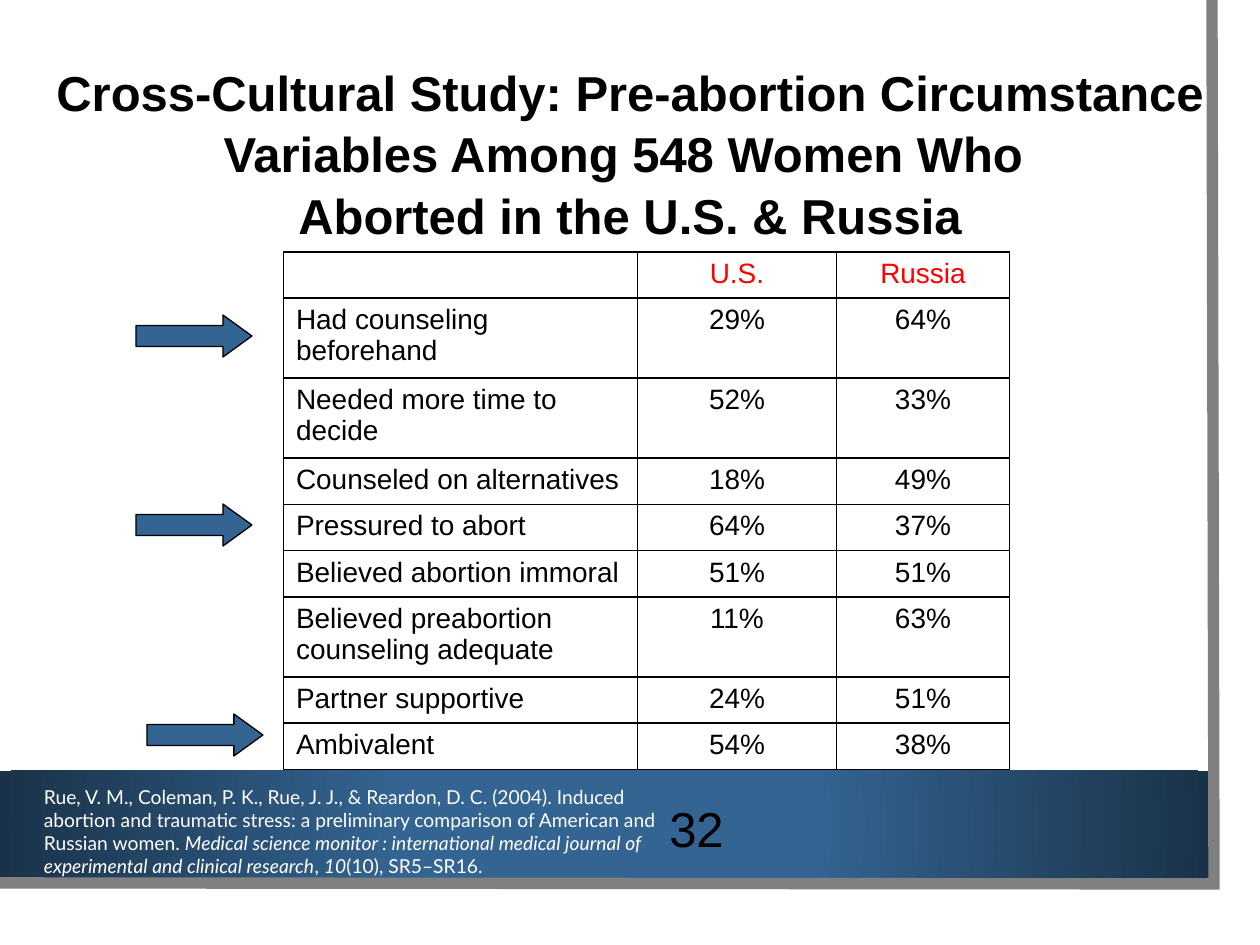
from lxml import etree
from pptx import Presentation
from pptx.dml.color import RGBColor
from pptx.enum import shapes, text
from pptx.oxml import parse_xml
from pptx.oxml.ns import nsdecls, qn
from pptx.util import Pt

TITLE = ["Cross-Cultural Study: Pre-abortion Circumstance Variables Among 548 Women Who ",
         "Aborted in the U.S. & Russia"]
ROWS = [("", "U.S.", "Russia"),
        ("Had counseling beforehand", "29%", "64%"),
        ("Needed more time to decide", "52%", "33%"),
        ("Counseled on alternatives", "18%", "49%"),
        ("Pressured to abort", "64%", "37%"),
        ("Believed abortion immoral", "51%", "51%"),
        ("Believed preabortion counseling adequate", "11%", "63%"),
        ("Partner supportive", "24%", "51%"),
        ("Ambivalent", "54%", "38%")]
TALL_ROWS = {1, 2, 6}
COLUMNS = [354, 199, 173]
# Citation runs: text, italic
CITATION = [
    ("Rue, V. M., Coleman, P. K., Rue, J. J., & Reardon, D. C. (2004). Induced abortion and "
     "traumatic stress: a preliminary comparison of American and Russian women. ", False),
    ("Medical science monitor : international medical journal of experimental and clinical "
     "research", True),
    (", ", False), ("10", True), ("(10), SR5–SR16.", False)]
ARROWS = [(136, 315), (136, 504), (147, 714)]
FRAME = [(1212, 0), (1214, 884), (0, 883)]
BLUE, NAVY = "346492", "1A3249"


def px(n):
    return round(n * 914400 / 126)


def rgb(value):
    return RGBColor.from_string(value)


def set_font(p, size, color="000000", name="Arial", bold=False):
    p.font.size, p.font.name, p.font.bold = Pt(size), name, bold
    p.font.color.rgb = rgb(color)


def add_box(kind, x, y, w, h, fill, line=None):
    sp = slide.shapes.add_shape(kind, px(x), px(y), px(w), px(h))
    sp.shadow.inherit = False
    sp.fill.solid()
    sp.fill.fore_color.rgb = rgb(fill)
    if line:
        sp.line.color.rgb = rgb(line)
        sp.line.width = Pt(0.75)
    else:
        sp.line.fill.background()
    return sp


def add_text(x, y, w, h):
    sp = slide.shapes.add_textbox(px(x), px(y), px(w), px(h))
    sp.text_frame.word_wrap = True
    return sp.text_frame


def add_borders(cell):
    tcPr = cell._tc.get_or_add_tcPr()
    for i, side in enumerate(("lnL", "lnR", "lnT", "lnB")):
        tcPr.insert(i, parse_xml(
            f'<a:{side} {nsdecls("a")} w="12700"><a:solidFill><a:srgbClr val="000000"/>'
            f'</a:solidFill></a:{side}>'))


prs = Presentation()
prs.slide_width, prs.slide_height = px(1260), px(945)
slide = prs.slides.add_slide(prs.slide_layouts[5])

# Backdrop: white page, footer band with a radial gradient, grey edge
add_box(shapes.MSO_SHAPE.RECTANGLE, 0, 0, 1239, 916, "FFFFFF")
band = add_box(shapes.MSO_SHAPE.RECTANGLE, 0, 771, 1209, 107, BLUE)
solid = band._element.spPr.find(qn("a:solidFill"))
solid.getparent().replace(solid, parse_xml(
    f'<a:gradFill {nsdecls("a")} rotWithShape="1"><a:gsLst>'
    f'<a:gs pos="34000"><a:srgbClr val="{BLUE}"/></a:gs>'
    f'<a:gs pos="100000"><a:srgbClr val="{NAVY}"/></a:gs></a:gsLst>'
    '<a:path path="circle"><a:fillToRect l="50000" t="50000" r="50000" b="50000"/></a:path>'
    '</a:gradFill>'))

points = [(px(x), px(y)) for x, y in FRAME]
builder = slide.shapes.build_freeform(*points[0])
builder.add_line_segments(points[1:], close=False)
edge = builder.convert_to_shape()
edge.shadow.inherit = False
edge.fill.background()
edge.line.color.rgb = rgb("808080")
edge.line.width = Pt(6.5)
etree.SubElement(edge._element.spPr.find(qn("a:ln")), qn("a:miter"), lim="800000")

# Page number
tf = add_text(650, 793, 93, 69)
tf.vertical_anchor = text.MSO_ANCHOR.MIDDLE
p = tf.paragraphs[0]
p.text, p.alignment = "32", text.PP_ALIGN.CENTER
set_font(p, 28)

# Table
heights = [80 if i in TALL_ROWS else 46 for i in range(len(ROWS))]
table = slide.shapes.add_table(len(ROWS), len(COLUMNS), px(283.5), px(252),
                               px(sum(COLUMNS)), px(sum(heights))).table
table.first_row = table.horz_banding = False
for column, width in zip(table.columns, COLUMNS):
    column.width = px(width)
for r, (row, values) in enumerate(zip(table.rows, ROWS)):
    row.height = px(heights[r])
    for c, value in enumerate(values):
        cell = table.cell(r, c)
        cell.fill.background()
        add_borders(cell)
        p = cell.text_frame.paragraphs[0]
        p.text = value
        p.alignment = text.PP_ALIGN.CENTER if c else text.PP_ALIGN.LEFT
        set_font(p, 16, "000000" if r else "FF0000")
        if not value:
            etree.SubElement(p._p, qn("a:endParaRPr"), sz="1600")

# Title, brought in front of the backdrop
title = slide.shapes.title
slide.shapes._spTree.append(title._element)
title.left, title.top, title.width, title.height = px(0), px(53), px(1260), px(189)
tf = title.text_frame
tf.text = "\n".join(TITLE)
tf.vertical_anchor = text.MSO_ANCHOR.TOP
tf.auto_size = text.MSO_AUTO_SIZE.NONE
for p in tf.paragraphs:
    p.alignment, p.line_spacing, p.space_before = text.PP_ALIGN.CENTER, 1.05, Pt(0)
    set_font(p, 28, bold=True)

# Citation
p = add_text(31.5, 779, 640, 106).paragraphs[0]
for words, italic in CITATION:
    run = p.add_run()
    run.text, run.font.italic = words, italic
set_font(p, 11, "FFFFFF", "Lato")

# Arrows pointing at key rows
for x, y in ARROWS:
    arrow = add_box(shapes.MSO_SHAPE.RIGHT_ARROW, x, y, 116, 42, BLUE, "000000")
    arrow.adjustments[1] = 0.69

prs.save("out.pptx")
